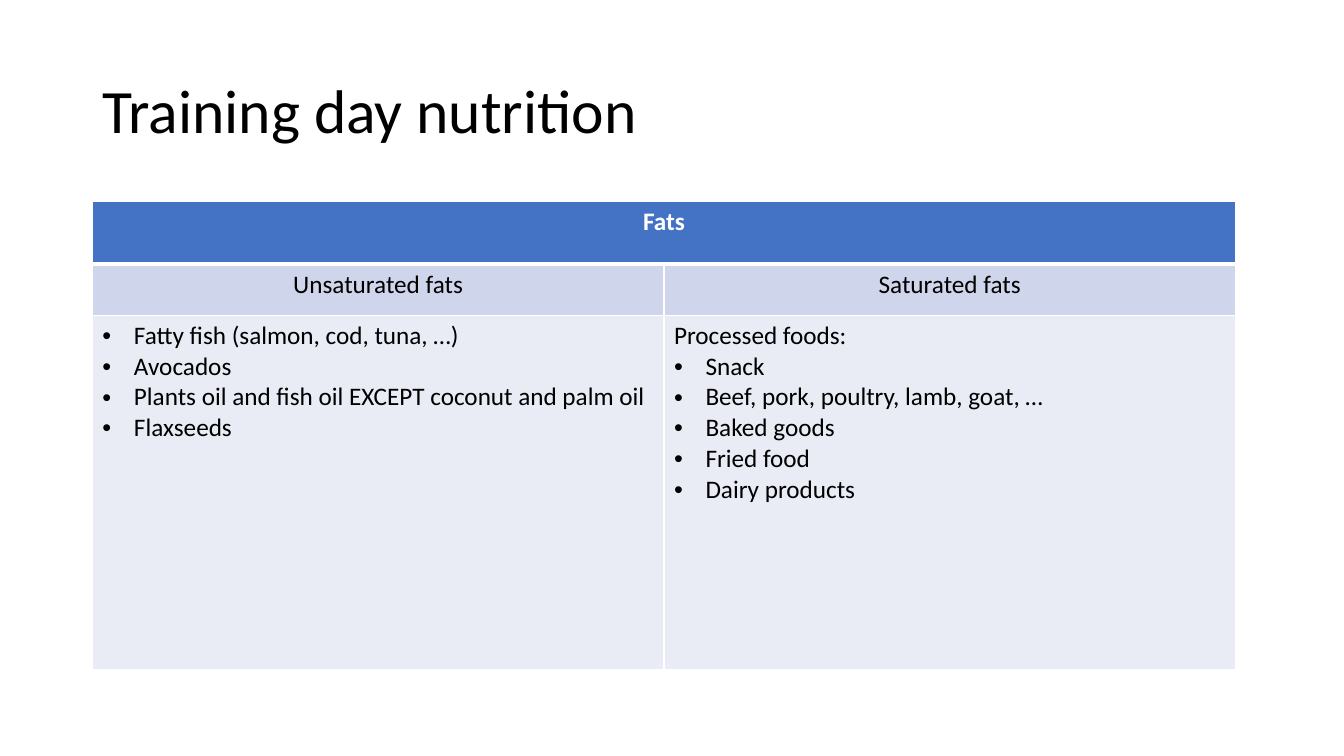
from dataclasses import dataclass

from lxml.etree import SubElement
from pptx import Presentation
from pptx.dml.color import RGBColor
from pptx.enum.text import MSO_ANCHOR, PP_ALIGN
from pptx.oxml import parse_xml
from pptx.oxml.ns import nsdecls, qn
from pptx.slide import Slide
from pptx.table import Table, _Cell
from pptx.text.text import _Paragraph
from pptx.util import Pt

COLOURS = {
    "text": "000000",
    "heading_text": "FFFFFF",
    "border": "FFFFFF",
    "heading": "4472C4",
    "kind": "CFD5EA",
    "foods": "E9EBF5",
}
TITLE_FONT = {"name": "Calibri", "size": Pt(44), "bold": False}
HEADING_FONT = {"name": "Calibri", "size": Pt(18), "bold": True}
BODY_FONT = {**HEADING_FONT, "bold": False}
TITLE_BOX = {"left": Pt(66), "top": Pt(28.75), "width": Pt(828), "height": Pt(104.4)}
COLUMN_WIDTH = 408.25
ROW_HEIGHTS = (44.6, 36.7, 252.7)
BULLET_INDENT = Pt(22.5)


@dataclass
class FatKind:
    name: str
    foods: list[str]
    intro: str = ""


FAT_KINDS = [
    FatKind("Unsaturated fats", [
        "Fatty fish (salmon, cod, tuna, …)",
        "Avocados",
        "Plants oil and fish oil EXCEPT coconut and palm oil",
        "Flaxseeds",
    ]),
    FatKind("Saturated fats", [
        "Snack",
        "Beef, pork, poultry, lamb, goat, …",
        "Baked goods",
        "Fried food",
        "Dairy products",
    ], intro="Processed foods:"),
]


def write(paragraph: _Paragraph, text: str, font: dict, colour: str = "text") -> None:
    run = paragraph.add_run()
    run.text = text
    for attribute, value in font.items():
        setattr(run.font, attribute, value)
    run.font.color.rgb = RGBColor.from_string(COLOURS[colour])


def add_bullet(paragraph: _Paragraph) -> None:
    properties = paragraph._p.get_or_add_pPr()
    properties.set("marL", str(BULLET_INDENT))
    properties.set("indent", str(-BULLET_INDENT))
    SubElement(properties, qn("a:buFont"), typeface="Arial")
    SubElement(properties, qn("a:buChar"), char="•")


def style_cell(cell: _Cell, fill: str, top: float = 1, bottom: float = 1) -> None:
    cell.fill.solid()
    cell.fill.fore_color.rgb = RGBColor.from_string(COLOURS[fill])
    # Borders stand before the fill
    widths = {"lnL": 1, "lnR": 1, "lnT": top, "lnB": bottom}
    for position, (side, width) in enumerate(widths.items()):
        border = parse_xml(
            f'<a:{side} {nsdecls("a")} w="{Pt(width)}"><a:solidFill>'
            f'<a:srgbClr val="{COLOURS["border"]}"/></a:solidFill></a:{side}>'
        )
        cell._tc.get_or_add_tcPr().insert(position, border)


def add_title(slide: Slide, text: str) -> None:
    title = slide.shapes.title
    for attribute, value in TITLE_BOX.items():
        setattr(title, attribute, value)
    title.text_frame.vertical_anchor = MSO_ANCHOR.MIDDLE
    paragraph = title.text_frame.paragraphs[0]
    paragraph.alignment = PP_ALIGN.LEFT
    paragraph.line_spacing = 0.9
    write(paragraph, text, TITLE_FONT)


def fill_column(table: Table, column: int, kind: FatKind) -> None:
    name_cell, foods_cell = table.cell(1, column), table.cell(2, column)
    style_cell(table.cell(0, column), "heading", bottom=3)
    style_cell(name_cell, "kind", top=3)
    style_cell(foods_cell, "foods")

    name = name_cell.text_frame.paragraphs[0]
    name.alignment = PP_ALIGN.CENTER
    write(name, kind.name, BODY_FONT)

    frame = foods_cell.text_frame
    lines = [kind.intro, *kind.foods] if kind.intro else kind.foods
    for index, line in enumerate(lines):
        paragraph = frame.add_paragraph() if index else frame.paragraphs[0]
        if line != kind.intro:
            add_bullet(paragraph)
        write(paragraph, line, BODY_FONT)


def add_fats_table(slide: Slide) -> None:
    table = slide.shapes.add_table(
        len(ROW_HEIGHTS), len(FAT_KINDS), Pt(66), Pt(144),
        Pt(COLUMN_WIDTH * len(FAT_KINDS)), Pt(sum(ROW_HEIGHTS)),
    ).table
    for row, height in zip(table.rows, ROW_HEIGHTS):
        row.height = Pt(height)
    for column, kind in enumerate(FAT_KINDS):
        table.columns[column].width = Pt(COLUMN_WIDTH)
        fill_column(table, column, kind)

    # Heading across both columns
    heading_cell = table.cell(0, 0)
    heading_cell.merge(table.cell(0, len(FAT_KINDS) - 1))
    heading = heading_cell.text_frame.paragraphs[0]
    heading.alignment = PP_ALIGN.CENTER
    write(heading, "Fats", HEADING_FONT, "heading_text")


def main() -> None:
    presentation = Presentation()
    presentation.slide_width, presentation.slide_height = Pt(960), Pt(540)
    slide = presentation.slides.add_slide(presentation.slide_layouts[5])
    add_title(slide, "Training day nutrition")
    add_fats_table(slide)
    presentation.save("out.pptx")


if __name__ == "__main__":
    main()
